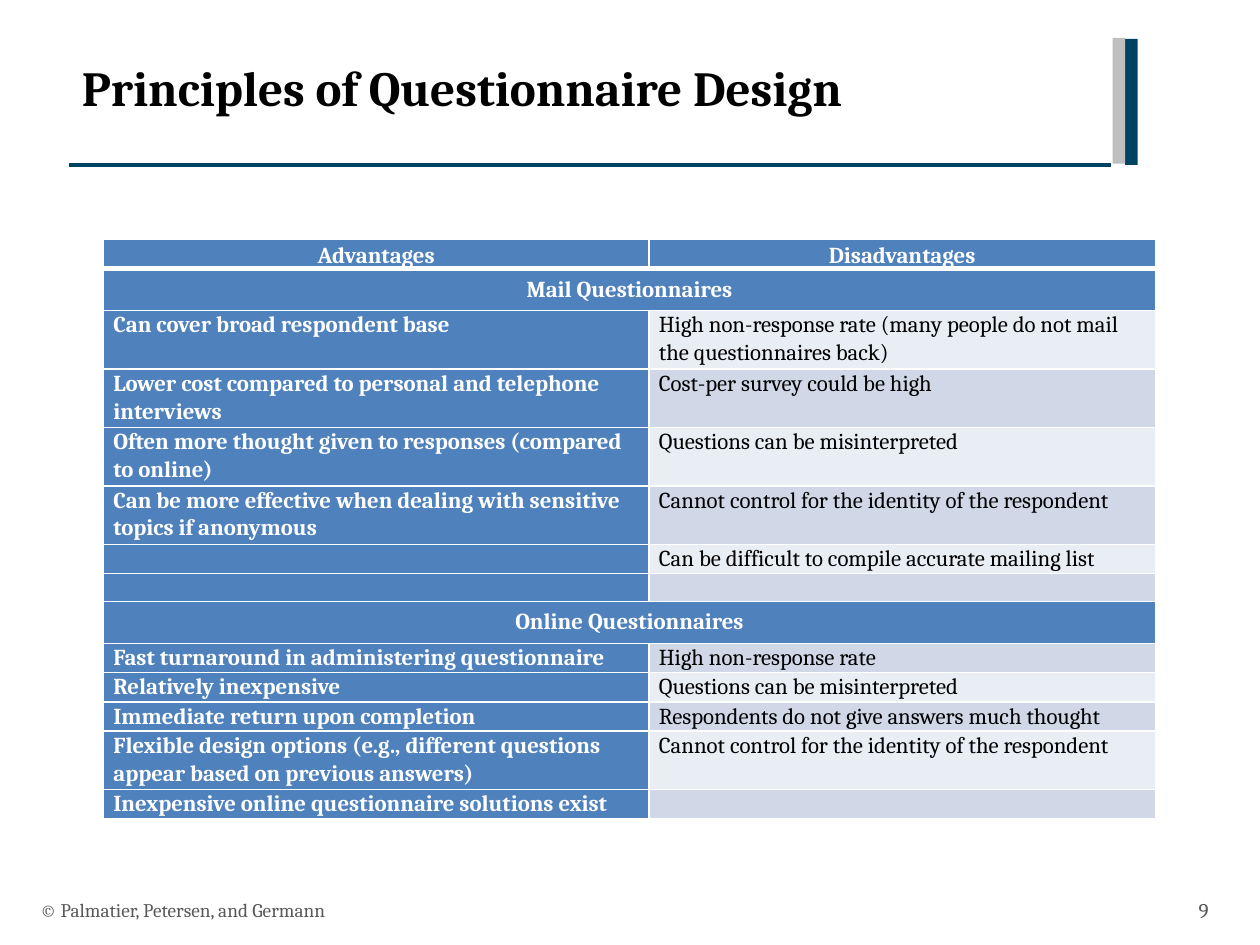
"""Build the slide that compares mail and online questionnaires."""
from dataclasses import dataclass

from lxml import etree
from pptx import Presentation
from pptx import util as u
from pptx.dml.color import RGBColor
from pptx.enum import shapes, text
from pptx.oxml import ns


@dataclass(frozen=True)
class Theme:
    """Colours and type sizes of the slide."""
    font: str = "Cambria"
    navy: str = "004264"
    silver: str = "BFBFBF"
    black: str = "000000"
    white: str = "FFFFFF"
    grey: str = "595959"
    blue: str = "4F81BD"
    bands: tuple = ("E9EDF4", "D0D8E8")
    title: int = 28
    body: int = 13
    footer: int = 11
    number: int = 12


THEME = Theme()
HEADINGS = ("Advantages", "Disadvantages")
MAIL = [
    ("Can cover broad respondent base",
     "High non-response rate (many people do not mail the questionnaires back)"),
    ("Lower cost compared to personal and telephone interviews",
     "Cost-per survey could be high"),
    ("Often more thought given to responses (compared to online)",
     "Questions can be misinterpreted"),
    ("Can be more effective when dealing with sensitive topics if anonymous",
     "Cannot control for the identity of the respondent"),
    ("", "Can be difficult to compile accurate mailing list"),
    ("", ""),
]
ONLINE = [
    ("Fast turnaround in administering questionnaire", "High non-response rate"),
    ("Relatively inexpensive", "Questions can be misinterpreted"),
    ("Immediate return upon completion",
     "Respondents do not give answers much thought"),
    ("Flexible design options (e.g., different questions appear based on previous answers)",
     "Cannot control for the identity of the respondent"),
    ("Inexpensive online questionnaire solutions exist", ""),
]
ROWS = [HEADINGS, ("Mail Questionnaires",), *MAIL, ("Online Questionnaires",), *ONLINE]
COLUMN_WIDTHS = (4.33, 4.02)
SINGLE, SECTION, DOUBLE = 0.22, 0.31, 0.45
WRAP_LENGTH = 50


def apply(target, values):
    """Set attributes of the target from a dict."""
    for name, value in values.items():
        setattr(target, name, value)


def write(paragraph, wording, size, color, bold=False, align=text.PP_ALIGN.LEFT):
    """Write one formatted run into a paragraph."""
    paragraph.alignment = align
    run = paragraph.add_run()
    run.text = wording
    apply(run.font, {"name": THEME.font, "size": u.Pt(size), "bold": bold})
    run.font.color.rgb = RGBColor.from_string(color)


def place(shape, left, top, width, height):
    """Position a shape by lengths in inches."""
    apply(shape, {"left": u.Inches(left), "top": u.Inches(top),
                  "width": u.Inches(width), "height": u.Inches(height)})


def add_title(slide, wording):
    """Fill and place the title placeholder."""
    title = slide.shapes.title
    place(title, 0.55, 0.41, 8.26, 1.22)
    apply(title.text_frame, {"vertical_anchor": text.MSO_ANCHOR.TOP, "word_wrap": True,
                             "auto_size": text.MSO_AUTO_SIZE.NONE})
    write(title.text_frame.paragraphs[0], wording, THEME.title, THEME.black, True)


def add_bar(slide, left, top, color):
    """Add one upright bar beside the title."""
    bar = slide.shapes.add_shape(shapes.MSO_SHAPE.RECTANGLE, u.Inches(left),
                                 u.Inches(top), u.Inches(0.1), u.Inches(1))
    bar.shadow.inherit = False
    bar.fill.solid()
    bar.fill.fore_color.rgb = RGBColor.from_string(color)
    bar.line.fill.background()


def add_rule(slide):
    """Add the line under the title."""
    rule = slide.shapes.add_connector(shapes.MSO_CONNECTOR.STRAIGHT, u.Inches(0.55),
                                      u.Inches(1.31), u.Inches(8.82), u.Inches(1.31))
    rule.line.width = u.Pt(2)
    rule.line.color.rgb = RGBColor.from_string(THEME.navy)
    etree.SubElement(rule._element.spPr, ns.qn("a:effectLst"))


def add_footer(slide, wording, left, width, size, align):
    """Add one text box at the foot of the slide."""
    footer = slide.shapes.add_textbox(u.Inches(left), u.Inches(7.02),
                                      u.Inches(width), u.Inches(0.4))
    apply(footer.text_frame, {"vertical_anchor": text.MSO_ANCHOR.MIDDLE, "word_wrap": True})
    write(footer.text_frame.paragraphs[0], wording, size, THEME.grey, align=align)


def set_borders(cell, **widths):
    """Give a cell white borders, one point wide unless stated."""
    properties = cell._tc.get_or_add_tcPr()
    for side in "LRTB":
        border = etree.SubElement(properties, ns.qn(f"a:ln{side}"),
                                  w=str(u.Pt(widths.get(side, 1))))
        fill = etree.SubElement(border, ns.qn("a:solidFill"))
        etree.SubElement(fill, ns.qn("a:srgbClr"), val=THEME.white)


def fill_cell(cell, wording, fill, color, bold, align, margins):
    """Format one cell and write its wording."""
    cell.fill.solid()
    cell.fill.fore_color.rgb = RGBColor.from_string(fill)
    side, end = (u.Inches(margin) for margin in margins)
    apply(cell, {"margin_left": side, "margin_right": side,
                 "margin_top": end, "margin_bottom": end})
    paragraph = cell.text_frame.paragraphs[0]
    paragraph.line_spacing = 1.07
    if wording:
        write(paragraph, wording, THEME.body, color, bold, align)
    else:
        paragraph._p.get_or_add_endParaRPr().set("sz", str(THEME.body * 100))


def row_height(entries):
    """Return the height that the row's wording needs."""
    if len(entries) == 1:
        return SECTION
    return DOUBLE if max(map(len, entries)) > WRAP_LENGTH else SINGLE


def add_comparison(slide):
    """Add the table of advantages and disadvantages."""
    heights = [row_height(entries) for entries in ROWS]
    table = slide.shapes.add_table(
        len(ROWS), len(COLUMN_WIDTHS), u.Inches(0.82), u.Inches(1.9),
        u.Inches(sum(COLUMN_WIDTHS)), u.Inches(sum(heights))).table
    for column, width in zip(table.columns, COLUMN_WIDTHS):
        column.width = u.Inches(width)
    for index, (entries, height) in enumerate(zip(ROWS, heights)):
        table.rows[index].height = u.Inches(height)
        for cell in table.rows[index].cells:
            set_borders(cell, **{0: {"B": 3}, 1: {"T": 3}}.get(index, {}))
        section = len(entries) == 1
        if section:
            table.cell(index, 0).merge(table.cell(index, 1))
        centred = section or index == 0
        align = text.PP_ALIGN.CENTER if centred else text.PP_ALIGN.LEFT
        margins = (0.11, 0.05) if section else (0.08, 0)
        for column, wording in enumerate(entries):
            strong = centred or column == 0
            fill = THEME.blue if strong else THEME.bands[index % 2]
            color = THEME.white if strong else THEME.black
            fill_cell(table.cell(index, column), wording, fill, color, strong, align, margins)
    for heading in table.rows[0].cells:
        heading.vertical_anchor = text.MSO_ANCHOR.BOTTOM


def main():
    """Build and save the slide."""
    deck = Presentation()
    apply(deck, {"slide_width": u.Inches(10), "slide_height": u.Inches(7.5)})
    slide = deck.slides.add_slide(deck.slide_layouts.get_by_name("Title Only"))
    add_rule(slide)
    add_bar(slide, 8.93, 0.31, THEME.navy)
    add_bar(slide, 8.83, 0.3, THEME.silver)
    add_title(slide, "Principles of Questionnaire Design")
    add_footer(slide, "© Palmatier, Petersen, and Germann", 0.22, 6.7,
               THEME.footer, text.PP_ALIGN.LEFT)
    add_footer(slide, "9", 9.08, 0.61, THEME.number, text.PP_ALIGN.RIGHT)
    add_comparison(slide)
    deck.save("out.pptx")


if __name__ == "__main__":
    main()
